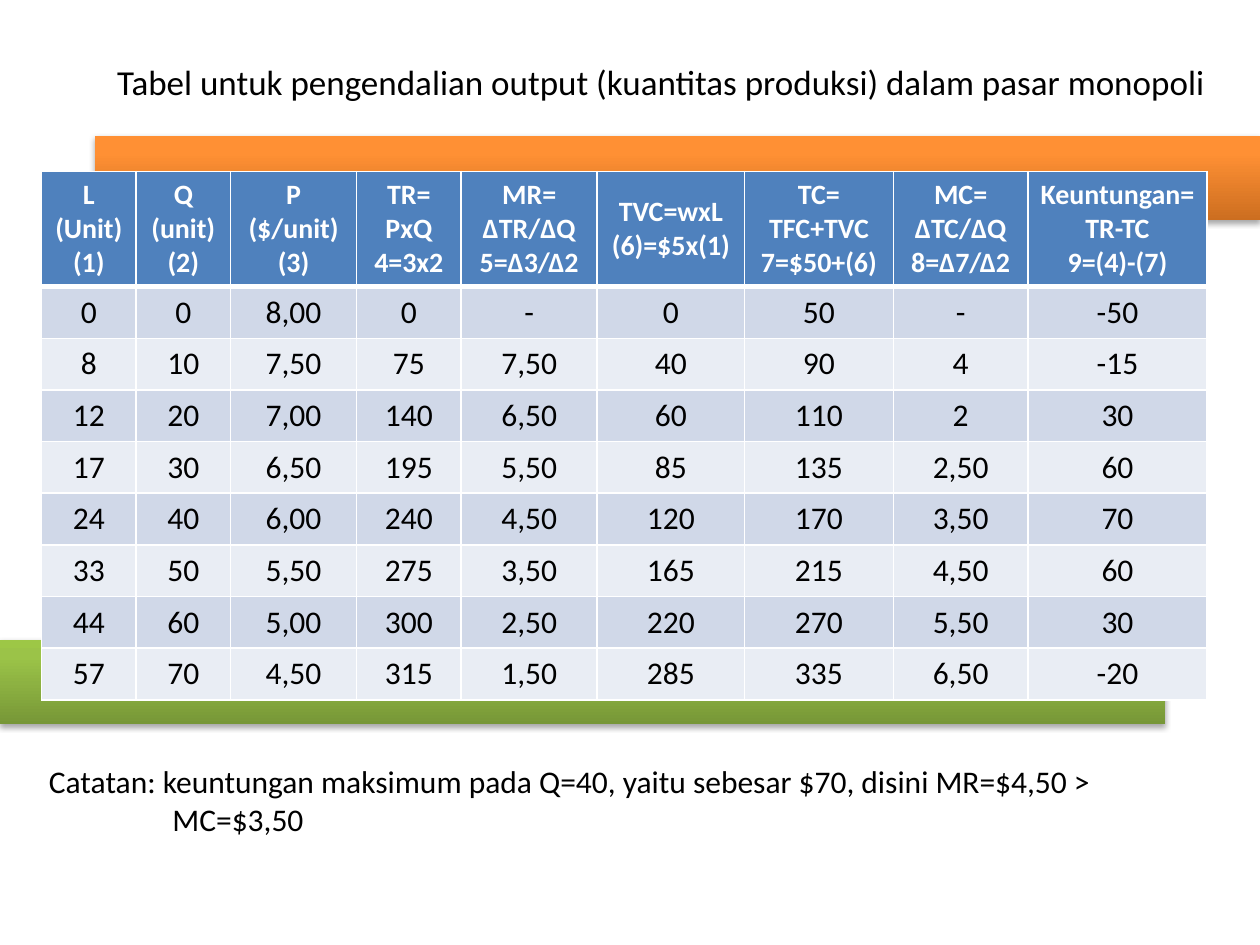
from copy import deepcopy
from lxml.etree import SubElement
from pptx import Presentation
from pptx.dml.color import RGBColor
from pptx.enum.shapes import MSO_SHAPE as Shape
from pptx.enum.text import MSO_ANCHOR as Anchor, MSO_AUTO_SIZE as Auto, PP_ALIGN as Align
from pptx.oxml.ns import qn
from pptx.util import Inches, Pt

BLACK = RGBColor(0x00, 0x00, 0x00)
WHITE = RGBColor(0xFF, 0xFF, 0xFF)
BLUE = RGBColor(0x4F, 0x81, 0xBD)
BANDS = [RGBColor(0xD0, 0xD8, 0xE8), RGBColor(0xE9, 0xED, 0xF4)]
GREEN = [RGBColor(0x77, 0x97, 0x37), RGBColor(0x9B, 0xC3, 0x48), RGBColor(0x9D, 0xC7, 0x46)]
ORANGE = [RGBColor(0xCC, 0x6E, 0x20), RGBColor(0xFF, 0x90, 0x34), RGBColor(0xFF, 0x91, 0x36)]

HEADS = ["L (Unit)\n(1)", "Q (unit)\n(2)", "P ($/unit)\n(3)", "TR=\nPxQ\n4=3x2",
         "MR=\nΔTR/ΔQ\n5=Δ3/Δ2", "TVC=wxL\n(6)=$5x(1)", "TC=\nTFC+TVC\n7=$50+(6)",
         "MC=\nΔTC/ΔQ\n8=Δ7/Δ2", "Keuntungan=TR-TC\n9=(4)-(7)"]
ROWS = """0 0 8,00 0 - 0 50 - -50
8 10 7,50 75 7,50 40 90 4 -15
12 20 7,00 140 6,50 60 110 2 30
17 30 6,50 195 5,50 85 135 2,50 60
24 40 6,00 240 4,50 120 170 3,50 70
33 50 5,50 275 3,50 165 215 4,50 60
44 60 5,00 300 2,50 220 270 5,50 30
57 70 4,50 315 1,50 285 335 6,50 -20"""
WIDTHS = [0.75, 0.75, 1, 0.83, 1.08, 1.17, 1.18, 1.07, 1.42]


def write(frame, text, size, color=BLACK, bold=False, align=Align.LEFT):
    frame.text = text
    form = {"name": "Calibri", "size": Pt(size), "bold": bold}
    for para in frame.paragraphs:
        para.alignment = align
        for run in para.runs:
            for key, val in form.items():
                setattr(run.font, key, val)
            run.font.color.rgb = color


def edge(cell, side, width):
    line = SubElement(cell._tc.get_or_add_tcPr(), qn("a:ln" + side), w=str(Pt(width)))
    fill = SubElement(line, qn("a:solidFill"))
    SubElement(fill, qn("a:srgbClr"), val=str(WHITE))


deck = Presentation()
deck.slide_width, deck.slide_height = Inches(10), Inches(7.5)
slide = deck.slides.add_slide(deck.slide_layouts[5])

# Gradient bars with a soft shadow
for left, top, colors in [(0, 5.08, GREEN), (0.75, 1.08, ORANGE)]:
    bar = slide.shapes.add_shape(Shape.RECTANGLE, Inches(left), Inches(top),
                                 Inches(9.25), Inches(0.67))
    bar.line.fill.background()
    bar.fill.gradient()
    bar.fill.gradient_angle = 90
    props = bar._element.spPr
    stops = props.find(".//" + qn("a:gsLst"))
    stops.append(deepcopy(stops[-1]))
    for stop, place, color in zip(bar.fill.gradient_stops, [0, 0.8, 1], colors):
        stop.position = place
        stop.color.rgb = color
    bar.shadow.inherit = False
    shade = SubElement(props.find(qn("a:effectLst")), qn("a:outerShdw"), blurRad=str(Pt(3.1)),
                       dist=str(Pt(1.8)), dir="5400000", rotWithShape="0")
    tint = SubElement(shade, qn("a:srgbClr"), val=str(BLACK))
    SubElement(tint, qn("a:alpha"), val="35000")

# Output table
data = [HEADS] + [line.split() for line in ROWS.splitlines()]
table = slide.shapes.add_table(len(data), len(HEADS), Inches(0.33), Inches(1.36),
                               Inches(9.25), Inches(4.14)).table
for col, width in zip(table.columns, WIDTHS):
    col.width = Inches(width)
for r, row in enumerate(data):
    head = r == 0
    table.rows[r].height = Inches(0.9 if head else 0.41)
    for c, text in enumerate(row):
        cell = table.cell(r, c)
        cell.vertical_anchor = Anchor.MIDDLE
        write(cell.text_frame, text, 16 if head else 18, WHITE if head else BLACK,
              head, Align.CENTER)
        for side, width in [("L", 1), ("R", 1), ("T", 3 if r == 1 else 1), ("B", 3 if head else 1)]:
            edge(cell, side, width)
        cell.fill.solid()
        cell.fill.fore_color.rgb = BLUE if head else BANDS[(r - 1) % 2]

# Note with a hanging indent
note = slide.shapes.add_textbox(Inches(0.29), Inches(6), Inches(9.42), Inches(0.71))
note.text_frame.word_wrap = True
write(note.text_frame, "Catatan: keuntungan maksimum pada Q=40, yaitu sebesar $70, "
      "disini MR=$4,50 > MC=$3,50", 18)
hang = note.text_frame.paragraphs[0]._p.get_or_add_pPr()
hang.set("marL", str(Inches(0.98)))
hang.set("indent", str(Inches(-0.98)))

# Title
title = slide.shapes.title
spots = {"left": 0.83, "top": 0.43, "width": 8.92, "height": 0.44}
for key, val in spots.items():
    setattr(title, key, Inches(val))
frame = title.text_frame
for key, val in {"word_wrap": False, "auto_size": Auto.NONE, "vertical_anchor": Anchor.TOP}.items():
    setattr(frame, key, val)
write(frame, "Tabel untuk pengendalian output (kuantitas produksi) dalam pasar monopoli", 20)

deck.save("out.pptx")
